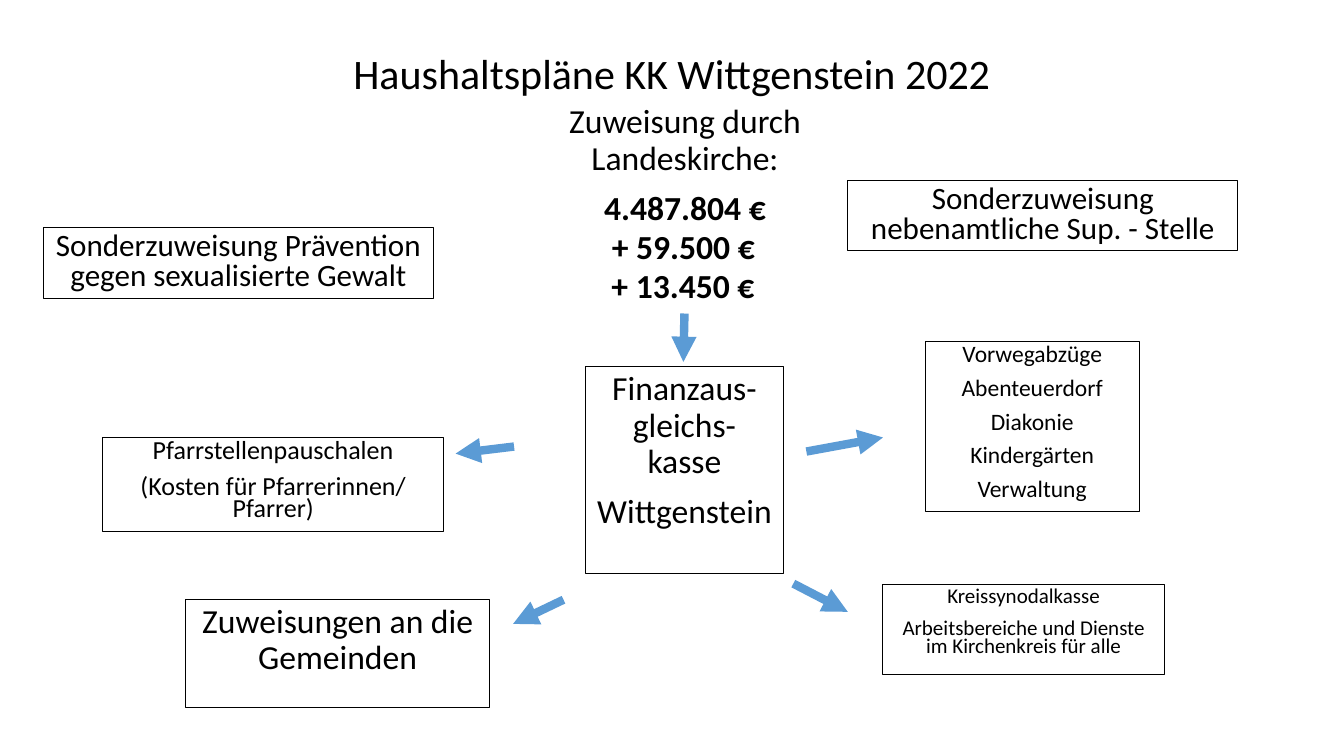
from pptx import Presentation, util as u
from pptx.dml.color import RGBColor
from pptx.enum import shapes, text
from pptx.oxml.ns import qn
from lxml import etree

theme = dict(
    font="Calibri", ink=RGBColor(0, 0, 0), arrow=RGBColor(0x5B, 0x9B, 0xD5),
    head=30, main=24, extra=22.2, pastor=18.6, item=16.8, synod=15,
    edge=0.75, shaft=6, gap=10,
)

deck = Presentation()
deck.slide_width, deck.slide_height = u.Inches(13.333), u.Inches(7.5)
slide = deck.slides.add_slide(deck.slide_layouts[6])
col, row = deck.slide_width / 100, deck.slide_height / 100


def place(*spots):
    """Turn alternating columns and rows into slide lengths."""
    return [round(n * (row if i % 2 else col)) for i, n in enumerate(spots)]


def write(shape, lines, size, lead):
    frame = shape.text_frame
    frame.word_wrap = True
    frame.vertical_anchor = text.MSO_ANCHOR.TOP
    for i, line in enumerate(lines):
        para = frame.add_paragraph() if i else frame.paragraphs[0]
        para.text = line
        para.alignment = text.PP_ALIGN.CENTER
        para.line_spacing = lead
        para.space_before = u.Pt(theme["gap"])
        para.font.name = theme["font"]
        para.font.size = u.Pt(theme[size])
        para.font.color.rgb = theme["ink"]
        para.font.bold = line.endswith("€")


# Title and grants: place, size, lines
labels = [
    ((12.5, 5.2, 75, 8.53), "head", ["Haushaltspläne KK Wittgenstein 2022"]),
    ((40.73, 13.2, 20.48, 23.73), "main",
     ["Zuweisung durch Landeskirche:", "4.487.804 €"]),
    ((44.4, 29.87, 12.9, 6.93), "main", ["+ 59.500 €"]),
    ((44.48, 34.93, 12.68, 6.27), "main", ["+ 13.450 €"]),
]
for spot, size, lines in labels:
    label = slide.shapes.add_textbox(*place(*spot))
    write(label, lines, size, 0.9)
    if size == "head":
        label.text_frame.vertical_anchor = text.MSO_ANCHOR.BOTTOM
        label.text_frame.paragraphs[0].space_before = u.Pt(0)

# Framed boxes: place, size, line spacing, lines
boxes = [
    ((43.58, 48.53, 14.7, 27.33), "main", 0.9,
     ["Finanzaus-\ngleichs-\nkasse", "Wittgenstein"]),
    ((68.85, 45.2, 15.9, 22.4), "item", 0.7,
     ["Vorwegabzüge", "Abenteuerdorf", "Diakonie", "Kindergärten", "Verwaltung"]),
    ((65.7, 77.33, 20.93, 11.87), "synod", 0.7,
     ["Kreissynodalkasse", "Arbeitsbereiche und Dienste im Kirchenkreis für alle"]),
    ((13.8, 79.33, 22.65, 14.27), "main", 0.9, ["Zuweisungen an die Gemeinden"]),
    ((7.65, 57.87, 25.35, 12.4), "pastor", 0.7,
     ["Pfarrstellenpauschalen", "(Kosten für Pfarrerinnen/ Pfarrer)"]),
    ((63.08, 23.87, 29.03, 9.33), "extra", 0.8,
     ["Sonderzuweisung nebenamtliche Sup. - Stelle"]),
    ((3.23, 30.13, 29.03, 9.33), "extra", 0.8,
     ["Sonderzuweisung Prävention gegen sexualisierte Gewalt"]),
]
for spot, size, lead, lines in boxes:
    box = slide.shapes.add_shape(shapes.MSO_SHAPE.RECTANGLE, *place(*spot))
    box.shadow.inherit = False
    box.fill.background()
    box.line.color.rgb = theme["ink"]
    box.line.width = u.Pt(theme["edge"])
    write(box, lines, size, lead)

# Arrows into and out of the central fund: start, end
arrows = [
    (50.93, 41.47, 50.85, 47.87),
    (60, 59.73, 65.7, 57.87),
    (59.03, 77.2, 63.08, 80.93),
    (41.93, 79.33, 38.18, 82.53),
    (38.25, 59.07, 33.9, 60),
]
for ends in arrows:
    arrow = slide.shapes.add_connector(shapes.MSO_CONNECTOR.STRAIGHT, *place(*ends))
    arrow.line.color.rgb = theme["arrow"]
    arrow.line.width = u.Pt(theme["shaft"])
    etree.SubElement(arrow.line._get_or_add_ln(), qn("a:tailEnd"), type="triangle")
    etree.SubElement(arrow._element.spPr, qn("a:effectLst"))

deck.save("out.pptx")
